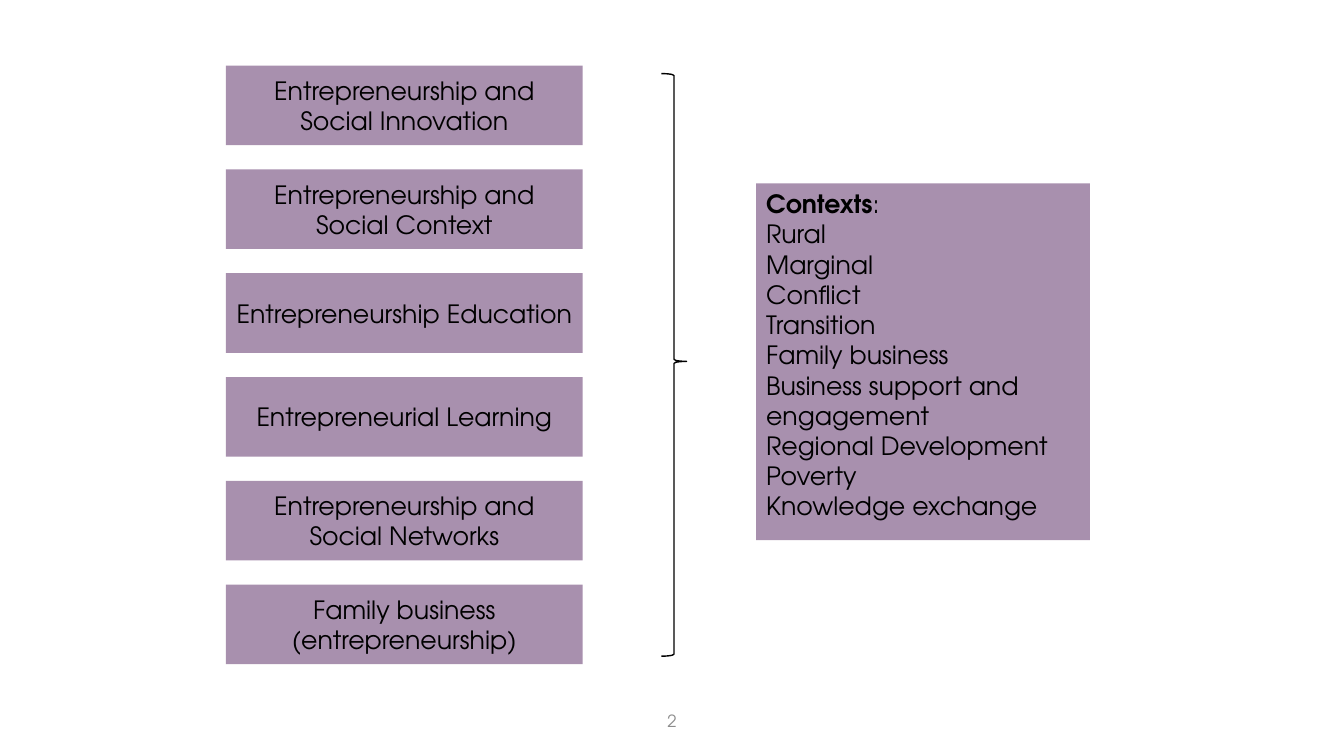
from pptx import Presentation
from pptx.dml.color import RGBColor
from pptx.enum.shapes import MSO_SHAPE
from pptx.enum.text import MSO_ANCHOR, PP_ALIGN
from pptx.util import Inches, Pt

RECTANGLE = MSO_SHAPE.RECTANGLE
RIGHT_BRACE = MSO_SHAPE.RIGHT_BRACE
TOP, MIDDLE = MSO_ANCHOR.TOP, MSO_ANCHOR.MIDDLE
LEFT, CENTER = PP_ALIGN.LEFT, PP_ALIGN.CENTER

MAUVE = RGBColor(0xA8, 0x90, 0xAE)
BLACK = RGBColor(0x00, 0x00, 0x00)
GREY = RGBColor(0x8C, 0x8C, 0x8C)
FONT = "TeX Gyre Adventor"

THEMES = [
    "Entrepreneurship and Social Innovation",
    "Entrepreneurship and Social Context",
    "Entrepreneurship Education",
    "Entrepreneurial Learning",
    "Entrepreneurship and Social Networks",
    "Family business (entrepreneurship)",
]
THEME_TOP, THEME_PITCH = 0.65, 1.03

CONTEXTS = [
    "Rural",
    "Marginal",
    "Conflict",
    "Transition",
    "Family business",
    "Business support and engagement",
    "Regional Development",
    "Poverty",
    "Knowledge exchange",
]


def style_text(frame, size, color, align, anchor):
    frame.word_wrap = True
    frame.vertical_anchor = anchor
    for paragraph in frame.paragraphs:
        paragraph.alignment = align
        for run in paragraph.runs:
            run.font.name = FONT
            run.font.size = Pt(size)
            run.font.color.rgb = color


def add_panel(slide, left, top, width, height, text, align, anchor):
    panel = slide.shapes.add_shape(
        RECTANGLE, Inches(left), Inches(top), Inches(width), Inches(height))
    panel.shadow.inherit = False
    panel.fill.solid()
    panel.fill.fore_color.rgb = MAUVE
    panel.line.fill.background()
    panel.text_frame.text = text
    style_text(panel.text_frame, 18, BLACK, align, anchor)
    return panel


def add_contexts(slide):
    text = "\n".join(["Contexts", *CONTEXTS])
    panel = add_panel(slide, 7.5, 1.82, 3.31, 3.54, text, LEFT, TOP)
    heading = panel.text_frame.paragraphs[0]
    heading.runs[0].font.bold = True
    heading.add_run().text = ":"
    style_text(panel.text_frame, 18, BLACK, LEFT, TOP)


def add_brace(slide):
    brace = slide.shapes.add_shape(
        RIGHT_BRACE, Inches(6.56), Inches(0.73), Inches(0.25), Inches(5.78))
    brace.adjustments[0] = 0.08
    brace.adjustments[1] = 0.494
    brace.shadow.inherit = False
    brace.fill.background()
    brace.line.color.rgb = BLACK
    brace.line.width = Pt(1)


def add_page_number(slide, number):
    frame = slide.shapes.add_textbox(
        Inches(6.27), Inches(6.95), Inches(0.79), Inches(0.4)).text_frame
    frame.margin_left = frame.margin_right = 0
    frame.margin_top = frame.margin_bottom = 0
    frame.text = number
    style_text(frame, 12, GREY, CENTER, MIDDLE)


def main():
    deck = Presentation()
    deck.slide_width, deck.slide_height = Inches(13.33), Inches(7.5)
    slide = deck.slides.add_slide(deck.slide_layouts[6])
    for row, theme in enumerate(THEMES):
        top = THEME_TOP + row * THEME_PITCH
        add_panel(slide, 2.24, top, 3.54, 0.79, theme, CENTER, MIDDLE)
    add_brace(slide)
    add_contexts(slide)
    add_page_number(slide, "2")
    deck.save("out.pptx")


if __name__ == "__main__":
    main()
